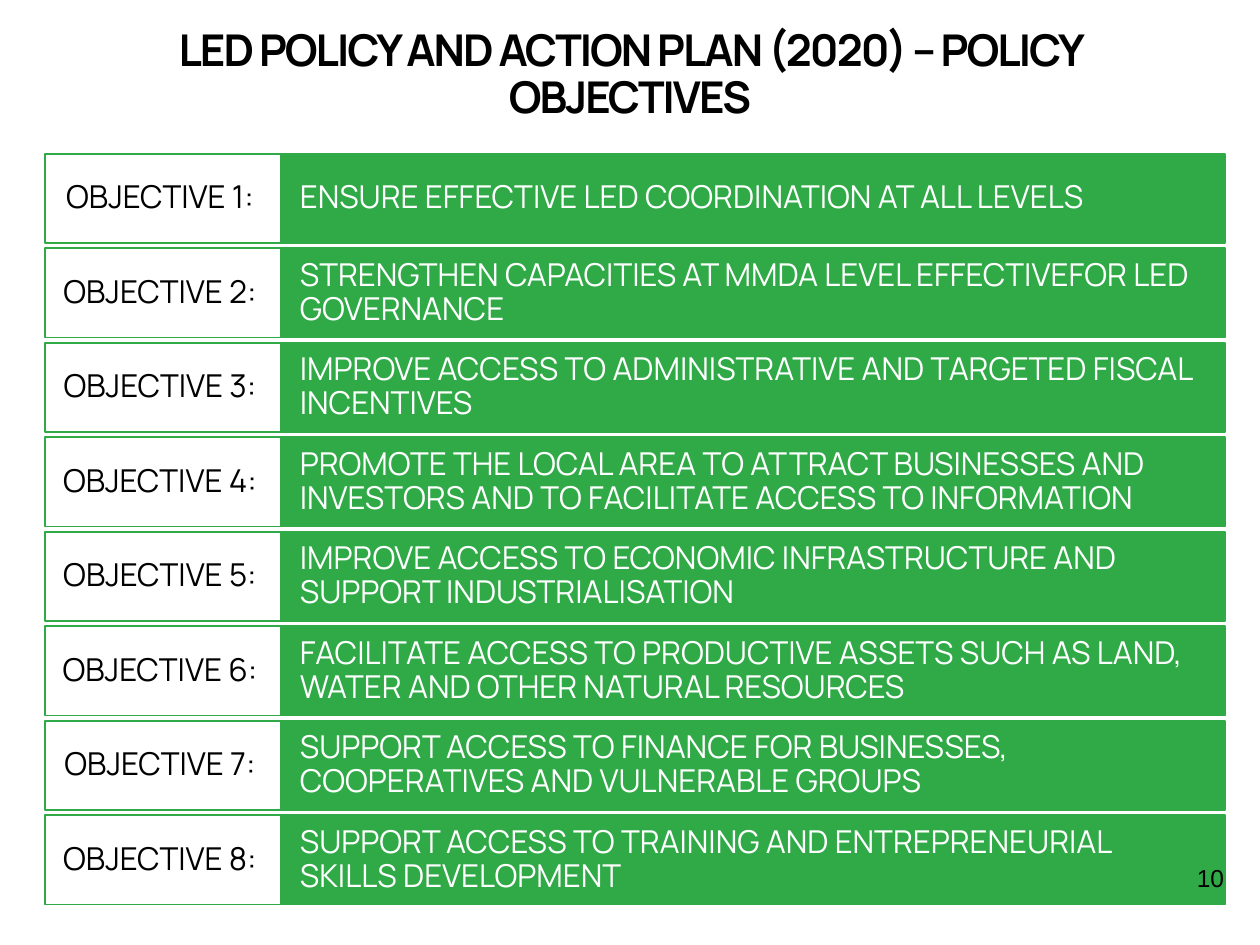
from dataclasses import dataclass

from pptx import Presentation
from pptx.dml.color import RGBColor
from pptx.enum.shapes import MSO_SHAPE
from pptx.enum.text import MSO_ANCHOR, MSO_AUTO_SIZE, PP_ALIGN
from pptx.util import Inches, Pt


@dataclass(frozen=True)
class Theme:
    """Colours, fonts and type sizes of the slide."""
    green: RGBColor = RGBColor(0x2F, 0xAA, 0x46)
    white: RGBColor = RGBColor(0xFF, 0xFF, 0xFF)
    black: RGBColor = RGBColor(0, 0, 0)
    font: str = "Manrope"
    number_font: str = "Arial"
    title_size: float = 25
    row_size: float = 18
    number_size: float = 14
    title_tracking: float = -1.1
    line_spacing: float = 0.9


@dataclass(frozen=True)
class Grid:
    """Two columns of equal rows, in inches."""
    left: float = 0.36
    top: float = 1.22
    label_width: float = 1.87
    text_width: float = 7.49
    row_height: float = 0.71
    row_gap: float = 0.04

    def cell(self, row, column):
        """Return left, top, width and height of a cell."""
        left = self.left + column * self.label_width
        top = self.top + row * (self.row_height + self.row_gap)
        width = (self.label_width, self.text_width)[column]
        return [Inches(value) for value in (left, top, width, self.row_height)]


THEME = Theme()
GRID = Grid()
OBJECTIVES = [
    "ENSURE EFFECTIVE LED COORDINATION AT ALL LEVELS",
    "STRENGTHEN CAPACITIES AT MMDA LEVEL EFFECTIVEFOR LED GOVERNANCE",
    "IMPROVE ACCESS TO ADMINISTRATIVE AND TARGETED FISCAL INCENTIVES",
    "PROMOTE THE LOCAL AREA TO ATTRACT BUSINESSES AND INVESTORS AND TO FACILITATE ACCESS TO INFORMATION",
    "IMPROVE ACCESS TO ECONOMIC INFRASTRUCTURE AND SUPPORT INDUSTRIALISATION",
    "FACILITATE ACCESS TO PRODUCTIVE ASSETS SUCH AS LAND, WATER AND OTHER NATURAL RESOURCES",
    "SUPPORT ACCESS TO FINANCE FOR BUSINESSES, COOPERATIVES AND VULNERABLE GROUPS",
    "SUPPORT ACCESS TO TRAINING AND ENTREPRENEURIAL SKILLS DEVELOPMENT",
]


def set_text(shape, text, size, color, align, margins, font=THEME.font, spacing=THEME.line_spacing):
    """Write one formatted paragraph into a shape and return its run."""
    frame = shape.text_frame
    frame.text = text
    frame.word_wrap = True
    frame.auto_size = MSO_AUTO_SIZE.NONE
    frame.vertical_anchor = MSO_ANCHOR.MIDDLE
    frame.margin_left = frame.margin_right = Inches(margins[0])
    frame.margin_top = frame.margin_bottom = Inches(margins[1])
    paragraph = frame.paragraphs[0]
    paragraph.alignment = align
    paragraph.line_spacing = spacing
    run = paragraph.runs[0]
    run.font.name = font
    run.font.size = Pt(size)
    run.font.color.rgb = color
    return run


def add_title(slide, text):
    """Place and format the slide title."""
    title = slide.shapes.title
    title.left, title.top = Inches(0.45), Inches(0.18)
    title.width, title.height = Inches(9.1), Inches(0.85)
    run = set_text(title, text, THEME.title_size, THEME.black, PP_ALIGN.CENTER, (0.2, 0.1))
    run.font.bold = True
    run.font._element.set("spc", str(round(THEME.title_tracking * 100)))


def add_cell(group, row, column, text, fill, color, align, margins):
    """Add one outlined rectangle with text to the group."""
    cell = group.shapes.add_shape(MSO_SHAPE.RECTANGLE, *GRID.cell(row, column))
    cell.shadow.inherit = False
    cell.fill.solid()
    cell.fill.fore_color.rgb = fill
    cell.line.color.rgb = THEME.green
    cell.line.width = Pt(1)
    set_text(cell, text, THEME.row_size, color, align, margins)


def add_objective(group, row, text):
    """Add a numbered label and its objective."""
    add_cell(group, row, 1, text, THEME.green, THEME.white, PP_ALIGN.LEFT, (0.15, 0.18))
    add_cell(group, row, 0, f"OBJECTIVE {row + 1}: ", THEME.white, THEME.black,
             PP_ALIGN.CENTER, (0.1, 0.07))


def add_page_number(slide, number):
    """Add the page number at the lower right."""
    box = slide.shapes.add_textbox(Inches(9.4), Inches(6.8), Inches(0.6), Inches(0.57))
    set_text(box, number, THEME.number_size, THEME.black, PP_ALIGN.LEFT, (0.1, 0.05),
             THEME.number_font, 1.0)
    box.text_frame.vertical_anchor = MSO_ANCHOR.TOP


def main():
    """Build and save the slide."""
    presentation = Presentation()
    presentation.slide_width, presentation.slide_height = Inches(10), Inches(7.5)
    slide = presentation.slides.add_slide(presentation.slide_layouts[5])
    add_title(slide, "LED POLICY AND ACTION PLAN (2020) – POLICY OBJECTIVES")
    group = slide.shapes.add_group_shape()
    for row, text in enumerate(OBJECTIVES):
        add_objective(group, row, text)
    add_page_number(slide, "10")
    presentation.save("out.pptx")


if __name__ == "__main__":
    main()
